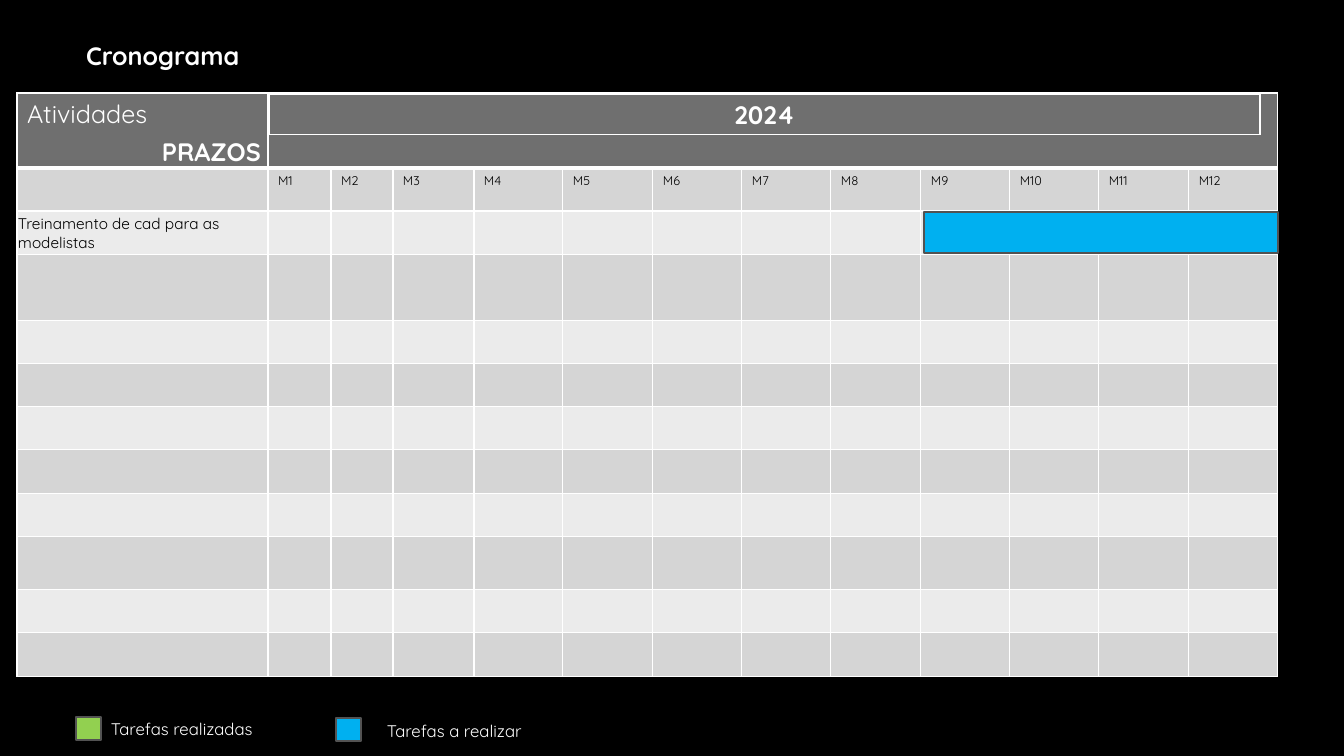
from dataclasses import dataclass
from itertools import pairwise

from lxml.etree import SubElement
from pptx import Presentation
from pptx.dml.color import RGBColor
from pptx.enum.shapes import MSO_SHAPE as Shape
from pptx.enum.text import MSO_ANCHOR as Anchor, MSO_AUTO_SIZE as AutoSize, PP_ALIGN as Align
from pptx.oxml.ns import qn
from pptx.util import Emu, Pt

EMU_PER_PX = 914400 / 100.8


@dataclass(frozen=True)
class Theme:
    font: str = "Quicksand"
    background: str = "000000"
    light: str = "FFFFFF"
    dark: str = "000000"
    header: str = "6F6F6F"
    bands: tuple = ("EBEBEB", "D5D5D5")
    done: str = "92D050"
    planned: str = "00B0F0"
    outline: str = "525252"
    heading: int = 18
    legend: int = 12
    task: int = 11
    month: int = 9


def px(length):
    return Emu(round(length * EMU_PER_PX))


class ScheduleSlide:
    def __init__(self, presentation, theme):
        self.theme = theme
        self.slide = presentation.slides.add_slide(presentation.slide_layouts[5])
        self.slide.background.fill.solid()
        self.slide.background.fill.fore_color.rgb = RGBColor.from_string(theme.background)

    def set_text(self, text_frame, text, size, color, bold=False, align=Align.LEFT):
        text_frame.text = text
        paragraph = text_frame.paragraphs[0]
        paragraph.alignment = align
        for run in paragraph.runs:
            run.font.name = self.theme.font
            run.font.size = Pt(size)
            run.font.bold = bold
            run.font.color.rgb = RGBColor.from_string(color)

    def title(self, text, left, top, width, height):
        shape = self.slide.shapes.title
        shape.left, shape.top, shape.width, shape.height = map(px, (left, top, width, height))
        shape.text_frame.vertical_anchor = Anchor.TOP
        shape.text_frame.auto_size = AutoSize.NONE
        self.set_text(shape.text_frame, text, self.theme.heading, self.theme.light, bold=True)

    def label(self, text, left, top, width, height, size, bold=False):
        shape = self.slide.shapes.add_textbox(*map(px, (left, top, width, height)))
        shape.text_frame.word_wrap = True
        self.set_text(shape.text_frame, text, size, self.theme.light, bold)

    def box(self, left, top, width, height, color):
        shape = self.slide.shapes.add_shape(Shape.RECTANGLE, *map(px, (left, top, width, height)))
        shape.shadow.inherit = False
        shape.fill.solid()
        shape.fill.fore_color.rgb = RGBColor.from_string(color)
        shape.line.color.rgb = RGBColor.from_string(self.theme.outline)
        shape.line.width = Pt(1.5)

    def table(self, left, top, widths, heights):
        frame = self.slide.shapes.add_table(
            len(heights), len(widths), *map(px, (left, top, sum(widths), sum(heights))))
        table = frame.table
        table.first_row = table.horz_banding = False
        for column, width in zip(table.columns, widths):
            column.width = px(width)
        for row, height in zip(table.rows, heights):
            row.height = px(height)
        return table

    def style_cell(self, cell, fill=None, bottom=1):
        properties = cell._tc.get_or_add_tcPr()
        for side, width in (("L", 1), ("R", 1), ("T", 1), ("B", bottom)):
            line = SubElement(properties, qn(f"a:ln{side}"), w=str(Pt(width)))
            solid = SubElement(line, qn("a:solidFill"))
            SubElement(solid, qn("a:srgbClr"), val=self.theme.light)
        if fill:
            cell.fill.solid()
            cell.fill.fore_color.rgb = RGBColor.from_string(fill)
        else:
            cell.fill.background()


def main():
    theme = Theme()
    presentation = Presentation()
    presentation.slide_width, presentation.slide_height = px(1344), px(756)
    schedule = ScheduleSlide(presentation, theme)
    schedule.title("Cronograma", 76, 35, 924, 40)

    # Schedule grid: narrow first months, then nine equal ones
    month_edges = [round(474 + 804 * step / 9) for step in range(10)]
    column_edges = [17, 268, 331, 393] + month_edges
    widths = [right - left for left, right in pairwise(column_edges)]
    heights = [75, 43, 44, 66, 43, 43, 43, 44, 43, 53, 43, 44]
    grid = schedule.table(17, 93, widths, heights)
    for row_index, row in enumerate(grid.rows):
        fill = theme.bands[row_index % 2] if row_index else theme.header
        for cell in row.cells:
            schedule.style_cell(cell, fill, bottom=1 if row_index else 3)
    grid.cell(0, 1).merge(grid.cell(0, 12))

    # Grid text
    schedule.set_text(grid.cell(0, 0).text_frame, "Atividades", theme.heading, theme.light)
    for month in range(1, 13):
        schedule.set_text(grid.cell(1, month).text_frame, f"M{month}", theme.month, theme.dark)
    task = grid.cell(2, 0)
    task.vertical_anchor = Anchor.MIDDLE
    task.margin_left = task.margin_right = task.margin_top = px(1)
    task.margin_bottom = 0
    schedule.set_text(task.text_frame, "Treinamento de cad para as modelistas", theme.task, theme.dark)

    # Header: deadlines and year
    schedule.label("PRAZOS", 152, 131, 283, 40, theme.heading, bold=True)
    year = schedule.table(269, 94, [991], [40]).cell(0, 0)
    schedule.style_cell(year)
    schedule.set_text(year.text_frame, "2024", theme.heading, theme.light, True, Align.CENTER)

    # Legend
    schedule.box(76, 717, 25, 23, theme.done)
    schedule.box(336, 718, 25, 23, theme.planned)
    schedule.label("Tarefas realizadas", 101, 714, 1142, 30, theme.legend)
    schedule.label("Tarefas a realizar", 377, 716, 394, 30, theme.legend)

    # Planned task bar, M9 to M12
    schedule.box(924, 212, 354, 41, theme.planned)

    presentation.save("out.pptx")


if __name__ == "__main__":
    main()
